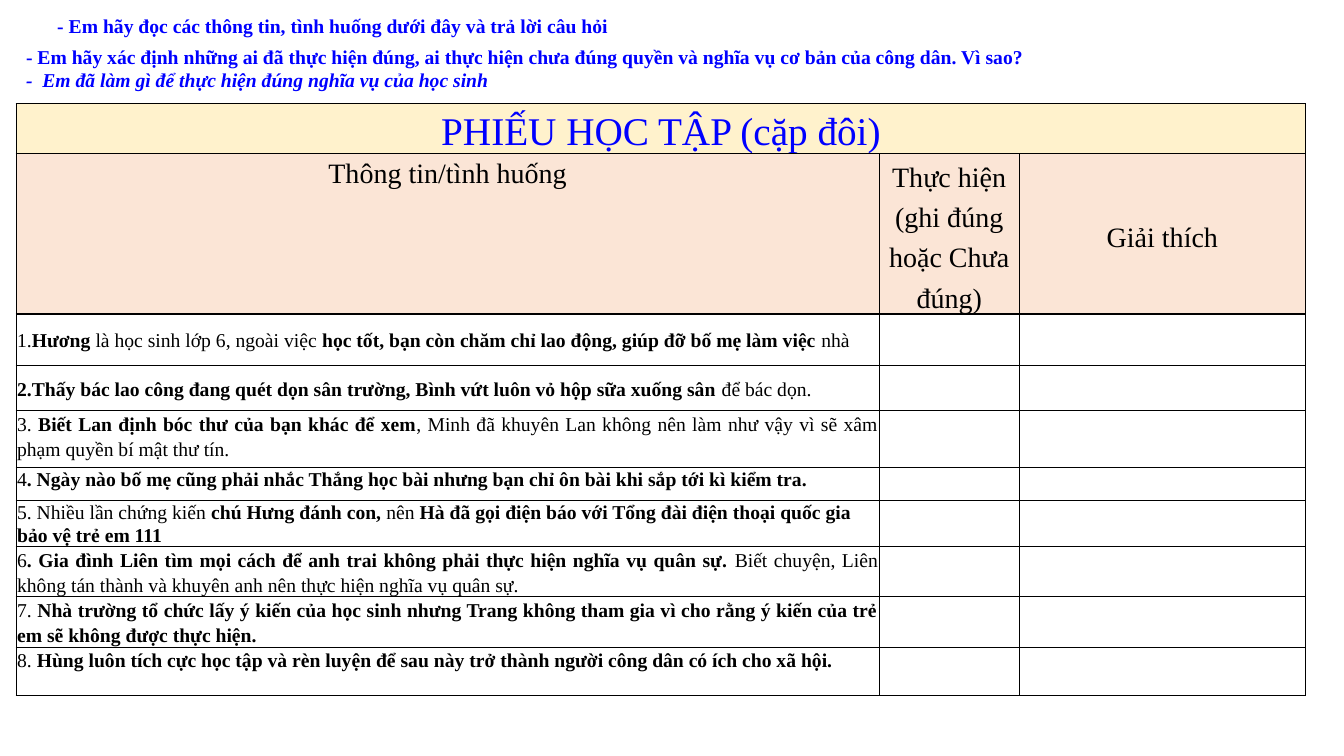
from pptx import Presentation
from pptx.dml.color import RGBColor as RGB
from pptx.enum.text import MSO_ANCHOR as Anchor, MSO_AUTO_SIZE as Fit, PP_ALIGN as Align
from pptx.oxml import parse_xml
from pptx.oxml.ns import nsdecls
from pptx.util import Inches, Pt

BLUE = RGB(0x00, 0x00, 0xFF)
BLACK = RGB(0x00, 0x00, 0x00)
WHITE = RGB(0xFF, 0xFF, 0xFF)
CREAM = RGB(0xFF, 0xF2, 0xCC)
PEACH = RGB(0xFB, 0xE5, 0xD6)
FONT = "Times New Roman"

COLS = [8.56, 1.39, 2.84]
ROWS = [0.45, 1.02, 0.51, 0.45, 0.56, 0.33, 0.41, 0.45, 0.5, 0.48]
HEADS = [
    ("Thông tin/tình huống", Anchor.TOP, 0.07, 1.15, 6),
    ("Thực hiện (ghi đúng hoặc Chưa đúng)", Anchor.BOTTOM, 0.01, 1.29, 0),
    ("Giải thích", Anchor.MIDDLE, 0.01, 1.29, 0),
]

# Text between asterisks is bold
MID = (Anchor.MIDDLE, Align.JUSTIFY, 1.15, 4)
TOP = (Anchor.TOP, Align.JUSTIFY, 1.15, 5)
LEFT = (Anchor.TOP, Align.LEFT, 1.07, 0)
CASES = [
    ("1.*Hương *là học sinh lớp 6, ngoài việc *học tốt, bạn còn chăm chỉ lao động, "
     "giúp đỡ bố mẹ làm việc *nhà", MID),
    ("*2.Thấy bác lao công đang quét dọn sân trường, Bình vứt luôn vỏ hộp sữa "
     "xuống sân *để bác dọn.", MID),
    ("3. *Biết Lan định bóc thư của bạn khác để xem*, Minh đã khuyên Lan không nên "
     "làm như vậy vì sẽ xâm phạm quyền bí mật thư tín.", (Anchor.TOP, Align.JUSTIFY, 1.15, 4)),
    ("4*. Ngày nào bố mẹ cũng phải nhắc Thắng học bài nhưng bạn chỉ ôn bài khi sắp "
     "tới kì kiểm tra.", LEFT),
    ("5. Nhiều lần chứng kiến *chú Hưng đánh con, *nên *Hà đã gọi điện báo với Tổng "
     "đài điện thoại quốc gia bảo vệ trẻ em 111", LEFT),
    ("6*. Gia đình Liên tìm mọi cách để anh trai không phải thực hiện nghĩa vụ quân "
     "sự. *Biết chuyện, Liên không tán thành và khuyên anh nên thực hiện nghĩa vụ "
     "quân sự.", TOP),
    ("7. *Nhà trường tổ chức lấy ý kiến của học sinh nhưng Trang không tham gia vì "
     "cho rằng ý kiến của trẻ em sẽ không được thực hiện.", TOP),
    ("8. *Hùng luôn tích cực học tập và rèn luyện để sau này trở thành người công "
     "dân có ích cho xã hội.", (Anchor.TOP, Align.JUSTIFY, 1.15, 0)),
]
TASKS = [
    "- Em hãy đọc các thông tin, tình huống dưới đây và trả lời câu hỏi",
    "- Em hãy xác định những ai đã thực hiện đúng, ai thực hiện chưa đúng quyền và "
    "nghĩa vụ cơ bản của công dân. Vì sao?",
    "-  Em đã làm gì để thực hiện đúng nghĩa vụ của học sinh",
]


class Sheet:
    def __init__(self, slide, font):
        self.slide, self.font = slide, font

    def run(self, para, text, size, color=BLACK, bold=False, slant=False):
        run = para.add_run()
        run.text = text
        font = run.font
        font.name, font.size, font.bold, font.italic = self.font, Pt(size), bold, slant
        font.color.rgb = color

    def text(self, para, text, size, color, align, line, after):
        para.alignment, para.line_spacing, para.space_after = align, line, Pt(after)
        for i, part in enumerate(text.split("*")):
            if part:
                self.run(para, part, size, color, bold=i % 2 == 1)

    def grid(self, x, y, cols, rows):
        frame = self.slide.shapes.add_table(
            len(rows), len(cols), Inches(x), Inches(y), Inches(sum(cols)), Inches(sum(rows)))
        table = frame.table
        table.first_row = table.horz_banding = False
        for col, wide in zip(table.columns, cols):
            col.width = Inches(wide)
        for row, high in zip(table.rows, rows):
            row.height = Inches(high)
        return table

    def cell(self, cell, fill, anchor=Anchor.TOP, side=0.01):
        cell.margin_left = cell.margin_right = Inches(side)
        cell.margin_top = cell.margin_bottom = 0
        cell.vertical_anchor = anchor
        props = cell._tc.get_or_add_tcPr()
        for edge in "LRTB":
            props.append(parse_xml(
                f'<a:ln{edge} {nsdecls("a")} w="12700"><a:solidFill>'
                f'<a:srgbClr val="{BLACK}"/></a:solidFill></a:ln{edge}>'))
        cell.fill.solid()
        cell.fill.fore_color.rgb = fill
        return cell.text_frame.paragraphs[0]

    def box(self, x, y, w, h):
        frame = self.slide.shapes.add_textbox(
            Inches(x), Inches(y), Inches(w), Inches(h)).text_frame
        frame.word_wrap = True
        frame.auto_size = Fit.SHAPE_TO_FIT_TEXT
        return frame


def main():
    deck = Presentation()
    deck.slide_width, deck.slide_height = Inches(13.33), Inches(7.5)
    sheet = Sheet(deck.slides.add_slide(deck.slide_layouts[6]), FONT)

    # Title row
    table = sheet.grid(0.16, 1.03, COLS, ROWS)
    table.cell(0, 0).merge(table.cell(0, 2))
    paras = [sheet.cell(table.cell(0, c), CREAM, side=0.07) for c in range(3)]
    sheet.text(paras[0], "PHIẾU HỌC TẬP (cặp đôi)", 28, BLUE, Align.CENTER, 1.15, 6)

    # Column heads
    for c, (text, anchor, side, line, after) in enumerate(HEADS):
        para = sheet.cell(table.cell(1, c), PEACH, anchor, side)
        sheet.text(para, text, 20, BLACK, Align.CENTER, line, after)

    # Cases, with two blank cells each to fill in
    for r, (text, (anchor, align, line, after)) in enumerate(CASES, 2):
        para = sheet.cell(table.cell(r, 0), WHITE, anchor)
        sheet.text(para, text, 14, BLACK, align, line, after)
        for c in (1, 2):
            sheet.cell(table.cell(r, c), WHITE)

    # Tasks above the table
    frame = sheet.box(0.16, 0.03, 12.84, 1.99)
    for i, text in enumerate(TASKS):
        para = frame.add_paragraph() if i else frame.paragraphs[0]
        sheet.run(para, text, 14, BLUE, bold=True, slant=i == 2)
    first = frame.paragraphs[0]
    first.alignment, first.line_spacing, first.space_after = Align.JUSTIFY, 1.27, Pt(5)
    first._p.get_or_add_pPr().set("indent", str(Inches(0.31)))

    deck.save("out.pptx")


if __name__ == "__main__":
    main()
